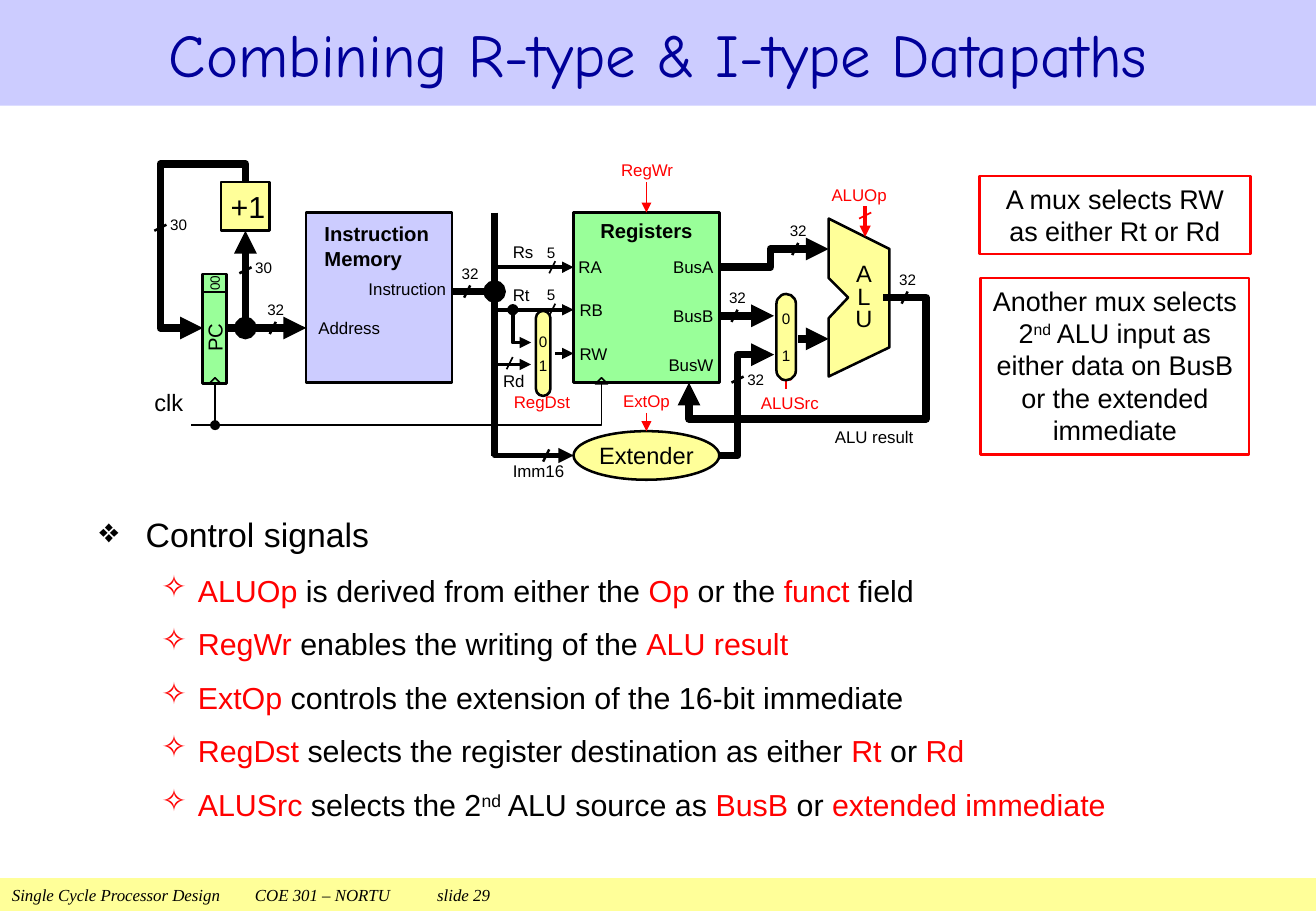
from lxml.etree import SubElement
from pptx import Presentation
from pptx.dml.color import RGBColor
from pptx.enum.shapes import MSO_CONNECTOR, MSO_SHAPE
from pptx.enum.text import MSO_ANCHOR, PP_ALIGN
from pptx.oxml.ns import qn
from pptx.util import Emu, Pt

PX = 9144  # 100 px to the inch
COLORS = {"black": "000000", "red": "FF0000", "navy": "000099", "lilac": "CCCCFF",
          "yellow": "FFFF99", "green": "99FF99"}
LEFT, CENTER, RIGHT = PP_ALIGN.LEFT, PP_ALIGN.CENTER, PP_ALIGN.RIGHT
RECT, OVAL, PILL, TRIANGLE = (MSO_SHAPE.RECTANGLE, MSO_SHAPE.OVAL,
                              MSO_SHAPE.ROUNDED_RECTANGLE, MSO_SHAPE.ISOSCELES_TRIANGLE)

TITLE = "Combining R-type & I-type Datapaths"
FOOTER = "Single Cycle Processor Design\tCOE 301 – NORTU\tslide 29"

# A paragraph is a list of runs; a run is plain text or (text, style).
HEADING = ["Control signals"]
SIGNALS = [
    [("ALUOp ", "red"), "is derived from either the ", ("Op", "red"), " or the ",
     ("funct", "red"), " field"],
    [("RegWr ", "red"), "enables the writing of the ", ("ALU result", "red")],
    [("ExtOp ", "red"), "controls the extension of the 16-bit immediate"],
    [("RegDst", "red"), " selects the register destination as either ", ("Rt", "red"),
     " or ", ("Rd", "red")],
    [("ALUSrc ", "red"), "selects the 2", ("nd", "super"), " ALU source as ",
     ("BusB", "red"), " or ", ("extended immediate", "red")],
]
NOTES = [
    ((806, 145, 223, 64), ["A mux selects RW as either Rt or Rd"]),
    ((807, 229, 221, 145), ["Another mux selects 2", ("nd", "super"),
                            " ALU input as either data on BusB or the extended immediate"]),
]

# name: (preset, place, rotation, fill, text, text format)
BLOCKS = {
    "registers": (RECT, (472, 175, 120, 140), 0, "green", "Registers",
                  dict(size=12, bold=True, anchor=MSO_ANCHOR.TOP, inset=(1, 5))),
    "memory": (RECT, (252, 175, 120, 140), 0, "lilac", "", {}),
    "pc": (RECT, (139, 268, 75, 20), 270, "green", "PC", dict(size=12)),
    "low bits": (RECT, (169, 223, 15, 20), 270, "green", "00", dict(size=8)),
    "plus one": (RECT, (182, 150, 40, 40), 0, "yellow", "+1", dict(size=18, inset=(4, 0, 0, 0))),
    "extender": (OVAL, (472, 355, 120, 40), 0, "yellow", "Extender", dict(size=14)),
}
ALU_OUTLINE = [(682, 310), (732, 286), (732, 205), (682, 180), (682, 229), (698, 245), (682, 262)]
MUXES = [((441, 256, 12, 70), (281, 301)), ((639, 242, 16, 71), (262, 293))]  # place, digit centres
CLOCK_INPUTS = [(172, 311), (490, 311)]

ARROW, DOT, PLAIN, DOT_ARROW = (None, "triangle"), (None, "oval"), (None, None), ("oval", "triangle")
# points, weight, ends, colour, joined block at the end
WIRES = [
    ([(592, 375), (607, 375), (607, 292), (637, 292)], 4.5, ARROW, "black", None),
    ([(727, 245), (762, 245), (762, 345), (567, 345), (567, 315)], 4.5, ARROW, "black", None),
    ([(407, 360), (407, 375), (472, 375)], 3, ARROW, "black", None),
    ([(592, 220), (634, 220), (634, 205), (682, 205)], 4.5, ARROW, "black", None),
    ([(592, 260), (637, 260)], 4.5, ARROW, "black", None),
    ([(407, 220), (472, 220)], 2.25, ARROW, "black", None),
    ([(407, 255), (472, 255)], 2.25, ARROW, "black", None),
    ([(457, 291), (472, 291)], 2.25, ARROW, "black", None),
    ([(407, 300), (437, 300)], 2.25, ARROW, "black", None),
    ([(422, 255), (422, 282), (437, 282)], 2.25, DOT_ARROW, "black", None),
    ([(187, 270), (252, 270)], 4.5, ARROW, "black", None),
    ([(372, 240), (407, 240)], 4.5, DOT, "black", None),
    ([(202, 270), (202, 190)], 4.5, DOT_ARROW, "black", ("plus one", 2)),
    ([(202, 150), (202, 135), (132, 135), (132, 270), (167, 270)], 4.5, ARROW, "black", None),
    ([(407, 175), (407, 375)], 4.5, PLAIN, "black", None),
    ([(657, 279), (682, 279)], 4.5, ARROW, "black", None),
    ([(495, 316), (495, 350), (157, 350)], 1, PLAIN, "black", None),
    ([(177, 316), (177, 350)], 1, DOT, "black", None),
    ([(712, 170), (712, 195)], 2.25, ARROW, "red", None),
    ([(532, 150), (532, 175)], 1, ARROW, "red", ("registers", 0)),
    ([(532, 340), (532, 355)], 1, ARROW, "red", ("extender", 0)),
    ([(446, 327), (446, 311)], 1, ARROW, "red", None),
    ([(647, 320), (647, 305)], 1, ARROW, "red", None),
]
STEEP, FLAT = (-5, 10), (-10, 5)
# slope, weight, colour, upper right ends
BUS_TICKS = [
    (STEEP, 1.5, "black", [(657, 200), (747, 240), (607, 255), (387, 235), (227, 265), (452, 370)]),
    (STEEP, 1, "black", [(457, 215), (457, 250), (422, 294)]),
    (FLAT, 1.5, "black", [(137, 185), (207, 220), (612, 310)]),
    (FLAT, 1, "red", [(717, 175)]),
]
# size, colour, alignment, [(text, place)]
LABELS = [
    (10, "red", CENTER, [
        ("ALUOp", (667, 150, 80, 20)), ("RegWr", (498, 130, 69, 20)), ("ExtOp", (507, 320, 50, 20)),
        ("RegDst", (421, 321, 50, 20)), ("ALUSrc", (622, 320, 56, 23))]),
    (10, "black", LEFT, [
        ("ALU result", (687, 350, 75, 20)), ("RA", (476, 210, 45, 20)), ("RB", (477, 240, 45, 30)),
        ("RW", (477, 281, 45, 20)), ("Address", (262, 255, 75, 30)), ("Rs", (422, 200, 20, 15)),
        ("Rt", (422, 235, 20, 15)), ("Rd", (414, 306, 20, 15)), ("Imm16", (422, 380, 50, 15))]),
    (10, "black", RIGHT, [
        ("BusA", (542, 210, 45, 20)), ("BusB", (542, 250, 45, 20)), ("BusW", (542, 290, 45, 20)),
        ("Instruction", (272, 225, 95, 25))]),
    (9, "black", LEFT, [
        ("32", (650, 180, 20, 20)), ("32", (740, 220, 20, 20)), ("32", (600, 235, 20, 20)),
        ("32", (380, 215, 20, 20)), ("32", (220, 245, 20, 20)), ("32", (615, 305, 20, 15)),
        ("30", (140, 175, 20, 20)), ("30", (210, 210, 20, 20)),
        ("5", (450, 200, 12, 15)), ("5", (450, 235, 12, 15))]),
    (14, "black", LEFT, [("clk", (127, 321, 30, 20))]),
]


def px(*lengths):
    return [Emu(length * PX) for length in lengths]


def rgb(name):
    return RGBColor.from_string(COLORS[name])


def write(shape, paragraphs, size=10, color="black", font="Arial", bold=False, italic=False,
          align=CENTER, anchor=MSO_ANCHOR.MIDDLE, inset=(0, 0), spacing=None):
    """Fill a shape with paragraphs; inset is (sides, ends) or (left, top, right, bottom)."""
    frame = shape.text_frame
    frame.word_wrap = True
    frame.vertical_anchor = anchor
    (frame.margin_left, frame.margin_top,
     frame.margin_right, frame.margin_bottom) = px(*(inset * 2)[:4])
    for index, runs in enumerate(paragraphs):
        paragraph = frame.add_paragraph() if index else frame.paragraphs[0]
        paragraph.alignment = align
        if spacing:
            paragraph.line_spacing = spacing
        for item in runs:
            words, style = (item, None) if isinstance(item, str) else item
            run = paragraph.add_run()
            run.text = words
            run.font.name, run.font.size = font, Pt(size)
            run.font.bold, run.font.italic = bold, italic
            run.font.color.rgb = rgb("red" if style == "red" else color)
            if style == "super":
                run.font._element.set("baseline", "30000")
    return frame


def label(place, paragraphs, **text_format):
    return write(slide.shapes.add_textbox(*px(*place)), paragraphs, **text_format)


def paint(shape, fill=None, line="black", weight=1.5):
    shape.shadow.inherit = False
    if fill:
        shape.fill.solid()
        shape.fill.fore_color.rgb = rgb(fill)
    else:
        shape.fill.background()
    if line:
        shape.line.color.rgb, shape.line.width = rgb(line), Pt(weight)
    else:
        shape.line.fill.background()
    return shape


def block(preset, place, **look):
    return paint(slide.shapes.add_shape(preset, *px(*place)), **look)


def outline(points, closed=False, **look):
    builder = slide.shapes.build_freeform(*points[0], scale=float(PX))
    builder.add_line_segments(points[1:], close=closed)
    return paint(builder.convert_to_shape(), **look)


def wire(points, weight, ends=PLAIN, color="black", join=None):
    if len(points) > 2:
        path = outline(points, line=color, weight=weight)
    else:
        path = slide.shapes.add_connector(MSO_CONNECTOR.STRAIGHT, *px(*points[0], *points[1]))
        path.line.color.rgb, path.line.width = rgb(color), Pt(weight)
        SubElement(path._element.spPr, qn("a:effectLst"))
        if join:
            path.end_connect(blocks[join[0]], join[1])
    for tag, kind in zip(("a:headEnd", "a:tailEnd"), ends):
        if kind:
            SubElement(path.line._get_or_add_ln(), qn(tag), type=kind)


def bullet(paragraph, mark, margin, hanging):
    paragraph.space_before = Pt(8)
    properties = paragraph._p.get_or_add_pPr()
    properties.set("marL", str(margin * PX))
    properties.set("indent", str(-hanging * PX))
    SubElement(properties, qn("a:buChar"), char=mark)


prs = Presentation()
prs.slide_width, prs.slide_height = px(1083, 750)
slide = prs.slides.add_slide(prs.slide_layouts[5])

title = slide.shapes.title
title.left, title.top, title.width, title.height = px(0, 0, 1083, 87)
title.fill.solid()
title.fill.fore_color.rgb = rgb("lilac")
write(title, [[TITLE]], size=36, color="navy", font="Comic Neue", inset=(10, 5))

write(block(RECT, (0, 723, 1083, 27), fill="yellow", line=None), [[FOOTER]], italic=True,
      font="Times New Roman", align=LEFT, anchor=MSO_ANCHOR.TOP, inset=(10, 5))

body = label((72, 415, 932, 280), [HEADING], size=20, align=LEFT, anchor=MSO_ANCHOR.TOP,
             inset=(10, 5), spacing=1.1) if not SIGNALS else label(
    (72, 415, 932, 280), [HEADING, *SIGNALS], size=18, align=LEFT, anchor=MSO_ANCHOR.TOP,
    inset=(10, 5), spacing=1.1)
heading, *signals = body.paragraphs
heading.runs[0].font.size = Pt(20)
bullet(heading, "❖", 38, 38)
for signal in signals:
    signal.level = 1
    bullet(signal, "✧", 81, 30)

for place, runs in NOTES:
    write(block(RECT, place, line="red"), [runs], size=16, anchor=MSO_ANCHOR.TOP, inset=(10, 5))

blocks = {}
for name, (preset, place, rotation, fill, words, text_format) in BLOCKS.items():
    blocks[name] = block(preset, place, fill=fill)
    blocks[name].rotation = rotation
    if words:
        write(blocks[name], [[words]], **text_format)
outline(ALU_OUTLINE, closed=True, fill="yellow")
for x, y in CLOCK_INPUTS:
    block(TRIANGLE, (x, y, 10, 5), weight=1)

for points, weight, ends, color, join in WIRES:
    wire(points, weight, ends, color, join)
for (dx, dy), weight, color, starts in BUS_TICKS:
    for x, y in starts:
        wire([(x, y), (x + dx, y + dy)], weight, color=color)

for (x, y, width, height), centers in MUXES:
    block(PILL, (x, y, width, height), fill="yellow").adjustments[0] = 0.5
    for digit, center in enumerate(centers):
        label((x, center - 10, width, 20), [[str(digit)]], size=9)

for size, color, align, items in LABELS:
    for words, place in items:
        label(place, [[words]], size=size, color=color, align=align)
label((267, 175, 95, 55), [["Instruction"], ["Memory"]], size=12, bold=True, align=LEFT)
label((690, 205, 42, 81), [[letter] for letter in "ALU"], size=14, inset=(10, 5), spacing=0.8)

prs.save("out.pptx")
